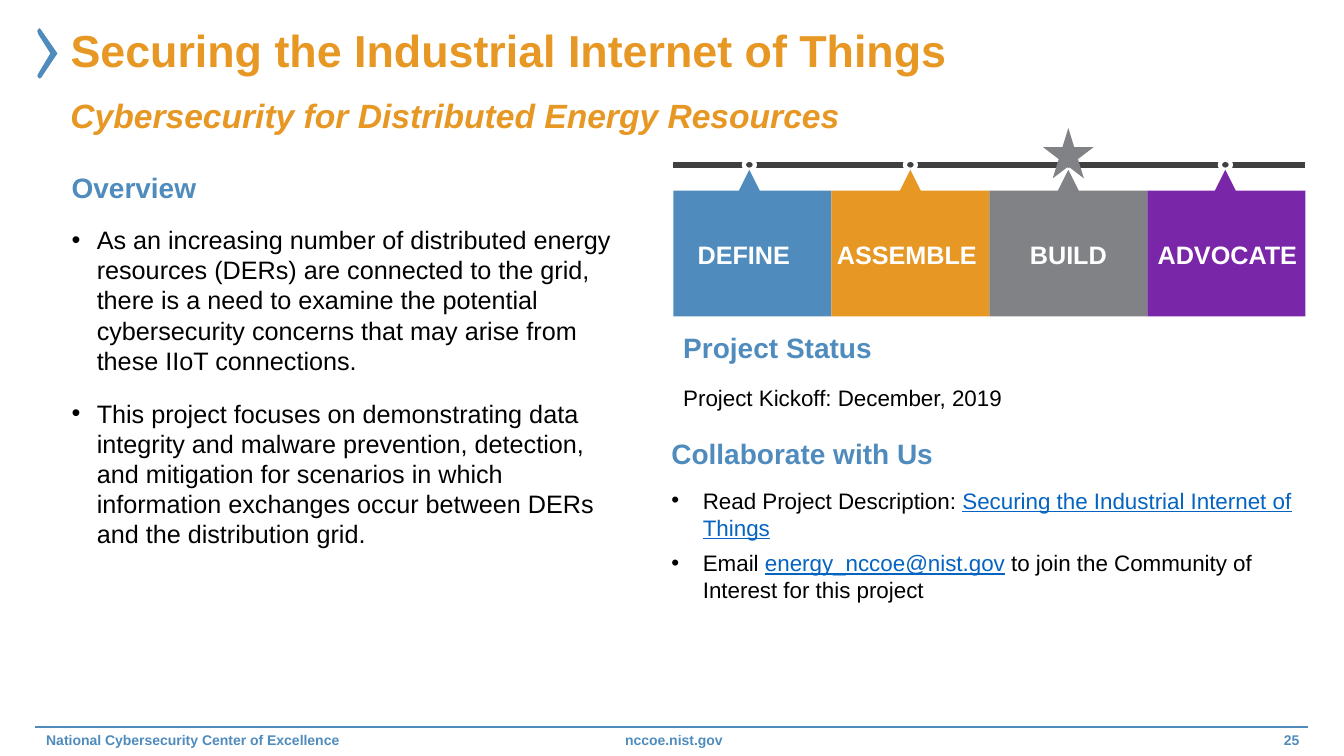
from dataclasses import dataclass

from lxml import etree
from pptx import Presentation
from pptx.dml.color import RGBColor
from pptx.enum.shapes import MSO_CONNECTOR, MSO_SHAPE
from pptx.enum.text import MSO_ANCHOR, MSO_AUTO_SIZE, PP_ALIGN
from pptx.oxml.ns import qn
from pptx.util import Inches, Pt

LEFT, CENTER, RIGHT = PP_ALIGN.LEFT, PP_ALIGN.CENTER, PP_ALIGN.RIGHT
RECTANGLE, TRIANGLE = MSO_SHAPE.RECTANGLE, MSO_SHAPE.ISOSCELES_TRIANGLE
OVAL, STAR = MSO_SHAPE.OVAL, MSO_SHAPE.STAR_5_POINT
STRAIGHT = MSO_CONNECTOR.STRAIGHT
TWO_CONTENT = 3


@dataclass(frozen=True)
class Theme:
    font: str = "Arial"
    blue: str = "4F8CBD"
    orange: str = "E79824"
    gray: str = "808285"
    purple: str = "7927A8"
    dark: str = "404040"
    link: str = "0563C1"
    black: str = "000000"
    white: str = "FFFFFF"
    title: int = 32
    subtitle: int = 24
    heading: int = 20
    body: int = 18
    detail: int = 16
    footer: int = 10


@dataclass(frozen=True)
class Box:
    """An area in grid cells: left column, top row, columns, rows."""
    left: float
    top: float
    width: float
    height: float

    def emu(self):
        return [cells(n) for n in (self.left, self.top, self.width, self.height)]


THEME = Theme()
COLUMNS, ROWS = 133.33, 75


def cells(count):
    """Length of grid cells; ten cells make an inch."""
    return Inches(count / 10)


def rgb(color):
    return RGBColor.from_string(color)


# Text helpers
def add_span(para, text, size, color, bold=False, italic=False, underline=False):
    span = para.add_run()
    span.text = text
    font = span.font
    font.name, font.size, font.color.rgb = THEME.font, Pt(size), rgb(color)
    font.bold, font.italic, font.underline = bold, italic, underline


def format_para(para, align=LEFT, before=0, after=0, spacing=1, indent=0):
    para.alignment, para.line_spacing = align, spacing
    para.space_before, para.space_after = Pt(before), Pt(after)
    props = para._p.get_or_add_pPr()
    props.set("marL", str(cells(indent)))
    props.set("indent", str(-cells(indent)))
    if indent:
        etree.SubElement(props, qn("a:buFont")).set("typeface", THEME.font)
        etree.SubElement(props, qn("a:buChar")).set("char", "•")
    else:
        etree.SubElement(props, qn("a:buNone"))


def prepare(holder, box, inset=True):
    """Place a text holder and return its empty frame."""
    holder.left, holder.top, holder.width, holder.height = box.emu()
    frame = holder.text_frame
    frame.word_wrap, frame.auto_size = True, MSO_AUTO_SIZE.NONE
    frame.vertical_anchor = MSO_ANCHOR.TOP
    if not inset:
        frame.margin_left = frame.margin_right = 0
        frame.margin_top = frame.margin_bottom = 0
    return frame


def add_label(page, box, text, size, color, align=LEFT, italic=False,
              inset=True, after=0):
    frame = prepare(page.shapes.add_textbox(*box.emu()), box, inset)
    para = frame.paragraphs[0]
    format_para(para, align, after=after)
    add_span(para, text, size, color, bold=True, italic=italic)


def add_heading(frame, text, before=10, spacing=0.9):
    para = frame.paragraphs[0]
    format_para(para, before=before, after=6, spacing=spacing)
    add_span(para, text, THEME.heading, THEME.blue, bold=True)


# Drawing helpers
def add_figure(page, kind, box, fill, outline=None):
    shape = page.shapes.add_shape(kind, *box.emu())
    shape.shadow.inherit = False
    shape.fill.solid()
    shape.fill.fore_color.rgb = rgb(fill)
    if outline:
        shape.line.color.rgb, shape.line.width = rgb(outline), Pt(3)
    else:
        shape.line.fill.background()
    return shape


def add_rule(page, left, right, row, color, weight):
    rule = page.shapes.add_connector(
        STRAIGHT, cells(left), cells(row), cells(right), cells(row))
    rule.line.color.rgb, rule.line.width = rgb(color), Pt(weight)
    etree.SubElement(rule._element.spPr, qn("a:effectLst"))


# Regions
def add_footer(page, box):
    right = box.left + box.width
    add_rule(page, box.left, right, box.top, THEME.blue, 1.5)
    for text, left, width, align in (
            ("National Cybersecurity Center of Excellence", 0.1, 49.1, LEFT),
            ("nccoe.nist.gov", 38.8, 49.1, CENTER),
            ("25", 95.3, 31.1, RIGHT)):
        add_label(page, Box(box.left + left, box.top, width, box.height),
                  text, THEME.footer, THEME.blue, align)


def add_chevron(page, box):
    outline = [(1, 0.5), (0.2, 0.98), (0.12, 1), (0.05, 0.98), (0, 0.94),
               (0.05, 0.9), (0.65, 0.5), (0.05, 0.12), (0, 0.06),
               (0.05, 0.02), (0.12, 0), (0.2, 0.04)]
    points = [(cells(box.left + x * box.width), cells(box.top + y * box.height))
              for x, y in outline]
    builder = page.shapes.build_freeform(*points[0])
    builder.add_line_segments(points[1:], close=True)
    chevron = builder.convert_to_shape()
    chevron.shadow.inherit = False
    chevron.fill.solid()
    chevron.fill.fore_color.rgb = rgb(THEME.blue)
    chevron.line.fill.background()


def add_titles(page, box):
    add_chevron(page, Box(box.left - 3.3, box.top + 0.5, 2, 5))
    frame = prepare(page.shapes.title, Box(box.left, box.top, box.width, 5.4), False)
    format_para(frame.paragraphs[0])
    add_span(frame.paragraphs[0], "Securing the Industrial Internet of Things",
             THEME.title, THEME.orange, bold=True)
    add_label(page, Box(box.left - 1, box.top + 6.6, 110.4, 5),
              "Cybersecurity for Distributed Energy Resources",
              THEME.subtitle, THEME.orange, italic=True)


def add_overview(page, box):
    frame = prepare(page.placeholders[1], box)
    add_heading(frame, "Overview")
    for text in (
            "As an increasing number of distributed energy resources (DERs) are "
            "connected to the grid, there is a need to examine the potential "
            "cybersecurity concerns that may arise from these IIoT connections.",
            "This project focuses on demonstrating data integrity and malware "
            "prevention, detection, and mitigation for scenarios in which "
            "information exchanges occur between DERs and the distribution grid."):
        para = frame.add_paragraph()
        format_para(para, before=8, after=8, indent=2.5)
        add_span(para, text, THEME.body, THEME.black)


def add_status(page, box):
    frame = prepare(page.shapes.add_textbox(*box.emu()), box)
    add_heading(frame, "Project Status")
    para = frame.add_paragraph()
    format_para(para, before=8, after=8)
    add_span(para, "Project Kickoff: December, 2019", THEME.detail, THEME.black)


def add_collaborate(page, box):
    frame = prepare(page.placeholders[2], box)
    add_heading(frame, "Collaborate with Us", before=0, spacing=1)
    for lead, link, tail in (
            ("Read Project Description: ",
             "Securing the Industrial Internet of Things", ""),
            ("Email ", "energy_nccoe@nist.gov",
             " to join the Community of Interest for this project")):
        para = frame.add_paragraph()
        format_para(para, before=6, indent=3.13)
        add_span(para, lead, THEME.detail, THEME.black)
        add_span(para, link, THEME.detail, THEME.link, underline=True)
        if tail:
            add_span(para, tail, THEME.detail, THEME.black)


def add_timeline(page, box):
    # Each stage: name, color, marker shift, label shift
    stages = (("DEFINE ", THEME.blue, -0.3, -0.5),
              ("ASSEMBLE ", THEME.orange, 0, 0),
              ("BUILD", THEME.gray, 0, 0),
              ("ADVOCATE", THEME.purple, -0.1, 0.1))
    pitch = box.width / len(stages)
    rail = box.top + 3.65
    add_rule(page, box.left, box.left + box.width, rail, THEME.dark, 4.5)
    for index, (name, color, marker_shift, label_shift) in enumerate(stages):
        left = box.left + index * pitch
        middle = left + pitch / 2 + marker_shift
        add_figure(page, OVAL, Box(middle - 0.55, rail - 0.5, 1.1, 1),
                   THEME.dark, THEME.white)
        add_figure(page, RECTANGLE, Box(left, box.top + 6.2, pitch, 12.5), color)
        add_figure(page, TRIANGLE, Box(middle - 2, box.top + 4.15, 4, 4), color)
        add_label(page, Box(left + label_shift, box.top + 11, pitch, 3), name,
                  THEME.body, THEME.white, CENTER, inset=False, after=3)
    # Star over the current stage
    current = box.left + 2.5 * pitch
    add_figure(page, STAR, Box(current - 2.5, box.top, 5, 5), THEME.gray)


def main():
    deck = Presentation()
    deck.slide_width, deck.slide_height = cells(COLUMNS), cells(ROWS)
    page = deck.slides.add_slide(deck.slide_layouts[TWO_CONTENT - 0])
    add_footer(page, Box(3.5, 72.1, 126.3, 2.7))
    add_titles(page, Box(7, 2.3, 122.8, 11.6))
    add_overview(page, Box(6.1, 16.8, 57.6, 38.3))
    add_status(page, Box(66.8, 32.7, 64.4, 8.7))
    add_collaborate(page, Box(65.6, 42.8, 66.7, 18.3))
    add_timeline(page, Box(66.8, 12.7, 62.7, 18.7))
    deck.save("out.pptx")


if __name__ == "__main__":
    main()
